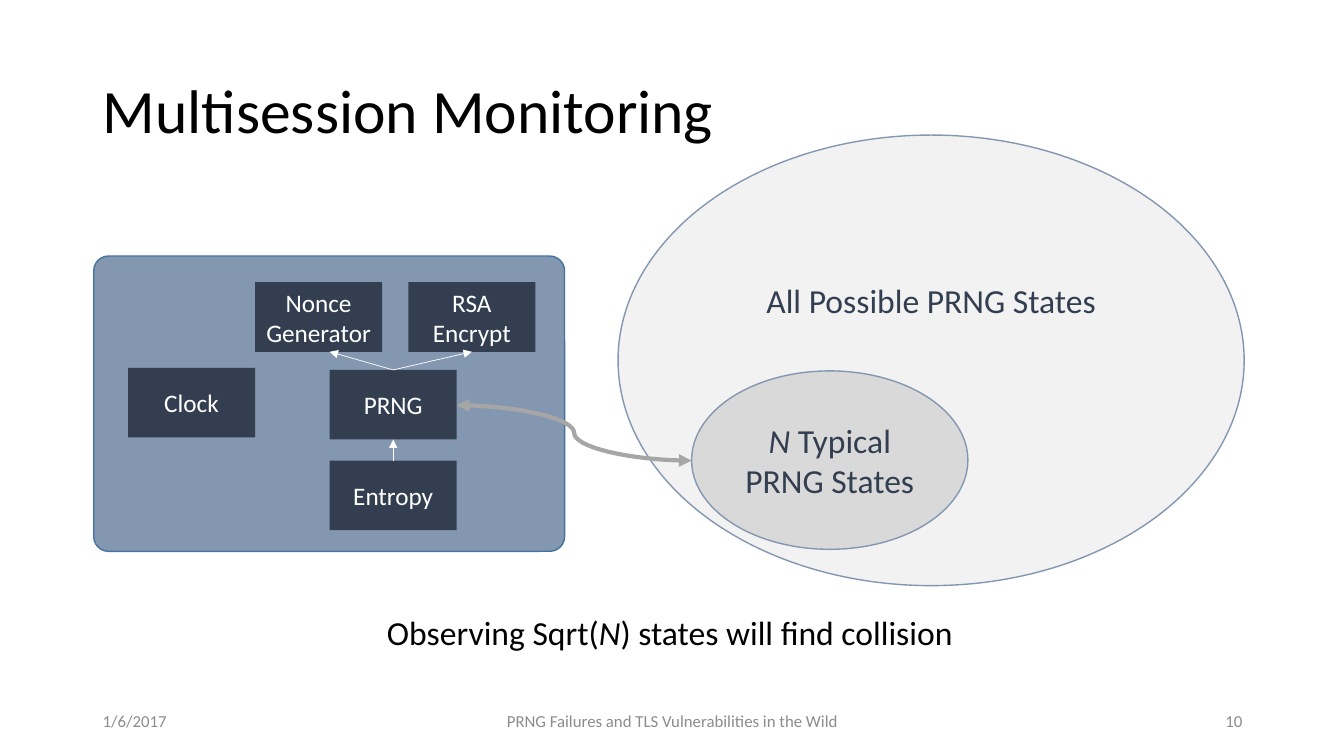
from lxml.etree import SubElement
from pptx import Presentation
from pptx.dml.color import RGBColor
from pptx.enum.shapes import MSO_CONNECTOR as Link, MSO_SHAPE as Shape
from pptx.enum.text import MSO_ANCHOR as Anchor, PP_ALIGN as Align
from pptx.oxml.ns import qn
from pptx.util import Pt

PX = 9144  # EMU per px, 100 px to the inch
BLACK = RGBColor(0x00, 0x00, 0x00)
WHITE = RGBColor(0xFF, 0xFF, 0xFF)
NAVY = RGBColor(0x33, 0x3F, 0x50)
STEEL = RGBColor(0x84, 0x97, 0xB0)
PANEL_EDGE = RGBColor(0x43, 0x73, 0x9E)
PALE = RGBColor(0xF2, 0xF2, 0xF2)
LIGHT = RGBColor(0xD9, 0xD9, 0xD9)
LINK_GRAY = RGBColor(0xA6, 0xA6, 0xA6)
FOOTER_GRAY = RGBColor(0x8C, 0x8C, 0x8C)


class Board:
    """Holds the style and the current slide."""
    font = "Calibri"

    def __init__(self, deck):
        self.slide = deck.slides.add_slide(deck.slide_layouts[5])

    def set_text(self, frame, text, size, color, align, anchor=Anchor.MIDDLE):
        """Fill a frame; a newline starts a paragraph, *stars* mark italics."""
        frame.vertical_anchor = anchor
        for number, line in enumerate(text.split("\n")):
            paragraph = frame.add_paragraph() if number else frame.paragraphs[0]
            paragraph.alignment = align
            font = paragraph.font
            font.name, font.size, font.color.rgb = self.font, Pt(size), color
            for index, part in enumerate(line.split("*")):
                if part:
                    run = paragraph.add_run()
                    run.text = part
                    if index % 2:
                        run.font.italic = True

    def title(self, text, x, y, w, h):
        title = self.slide.shapes.title
        title.left, title.top, title.width, title.height = (v * PX for v in (x, y, w, h))
        self.set_text(title.text_frame, text, 44, BLACK, Align.LEFT)
        title.text_frame.paragraphs[0].line_spacing = 0.9

    def label(self, text, x, y, w, h, size, color, align, anchor=Anchor.MIDDLE):
        box = self.slide.shapes.add_textbox(*(v * PX for v in (x, y, w, h)))
        box.text_frame.word_wrap = True
        self.set_text(box.text_frame, text, size, color, align, anchor)

    def shape(self, kind, x, y, w, h, fill, edge=None):
        shape = self.slide.shapes.add_shape(kind, *(v * PX for v in (x, y, w, h)))
        shape.shadow.inherit = False
        shape.fill.solid()
        shape.fill.fore_color.rgb = fill
        if edge is None:
            shape.line.fill.background()
        else:
            shape.line.color.rgb = edge
            shape.line.width = Pt(1)
        return shape

    def module(self, text, x, y):
        box = self.shape(Shape.RECTANGLE, x, y, 126, 69, NAVY)
        box.text_frame.margin_left = box.text_frame.margin_right = 0
        self.set_text(box.text_frame, text, 18, WHITE, Align.CENTER)

    def state_set(self, text, x, y, w, h, fill, lift=5):
        oval = self.shape(Shape.OVAL, x, y, w, h, fill, STEEL)
        oval.text_frame.word_wrap = True
        oval.text_frame.margin_bottom = lift * PX
        self.set_text(oval.text_frame, text, 24, NAVY, Align.CENTER)

    def arrow(self, kind, start, end, color, width, ends=("tailEnd",)):
        arrow = self.slide.shapes.add_connector(kind, *(v * PX for v in start + end))
        arrow.line.color.rgb = color
        arrow.line.width = Pt(width)
        properties = arrow._element.spPr
        for tag in ends:
            SubElement(properties.get_or_add_ln(), qn("a:" + tag), type="triangle")
        SubElement(properties, qn("a:effectLst"))


def main():
    deck = Presentation()
    deck.slide_width, deck.slide_height = 1333 * PX, 750 * PX
    board = Board(deck)

    # Title and footer
    board.title("Multisession Monitoring", 92, 40, 1150, 145)
    for text, x, w, align in (
        ("1/6/2017", 92, 300, Align.LEFT),
        ("PRNG Failures and TLS Vulnerabilities in the Wild", 442, 450, Align.CENTER),
        ("10", 942, 300, Align.RIGHT),
    ):
        board.label(text, x, 695, w, 40, 12, FOOTER_GRAY, align)

    # Device panel and its modules
    panel = board.shape(Shape.ROUNDED_RECTANGLE, 93, 254, 467, 293, STEEL, PANEL_EDGE)
    panel.adjustments[0] = 0.05
    for text, x, y in (
        ("PRNG", 327, 367),
        ("Entropy", 327, 457),
        ("Nonce\nGenerator", 253, 280),
        ("RSA\nEncrypt", 405, 280),
        ("Clock", 127, 365),
    ):
        board.module(text, x, y)

    # Flow between the modules
    for start, end in (
        ((390, 457), (390, 436)),
        ((390, 367), (327, 349)),
        ((390, 367), (468, 349)),
    ):
        board.arrow(Link.STRAIGHT, start, end, WHITE, 0.5)

    # State space
    board.state_set("All Possible PRNG States", 613, 134, 621, 447, PALE, lift=125)
    board.state_set("*N *Typical PRNG States", 686, 368, 274, 177, LIGHT)
    board.arrow(Link.CURVE, (453, 402), (686, 457), LINK_GRAY, 3, ("headEnd", "tailEnd"))

    # Conclusion
    board.label("Observing Sqrt(*N*) states will find collision",
                374, 602, 586, 50, 24, BLACK, Align.LEFT, Anchor.TOP)

    deck.save("out.pptx")


if __name__ == "__main__":
    main()
